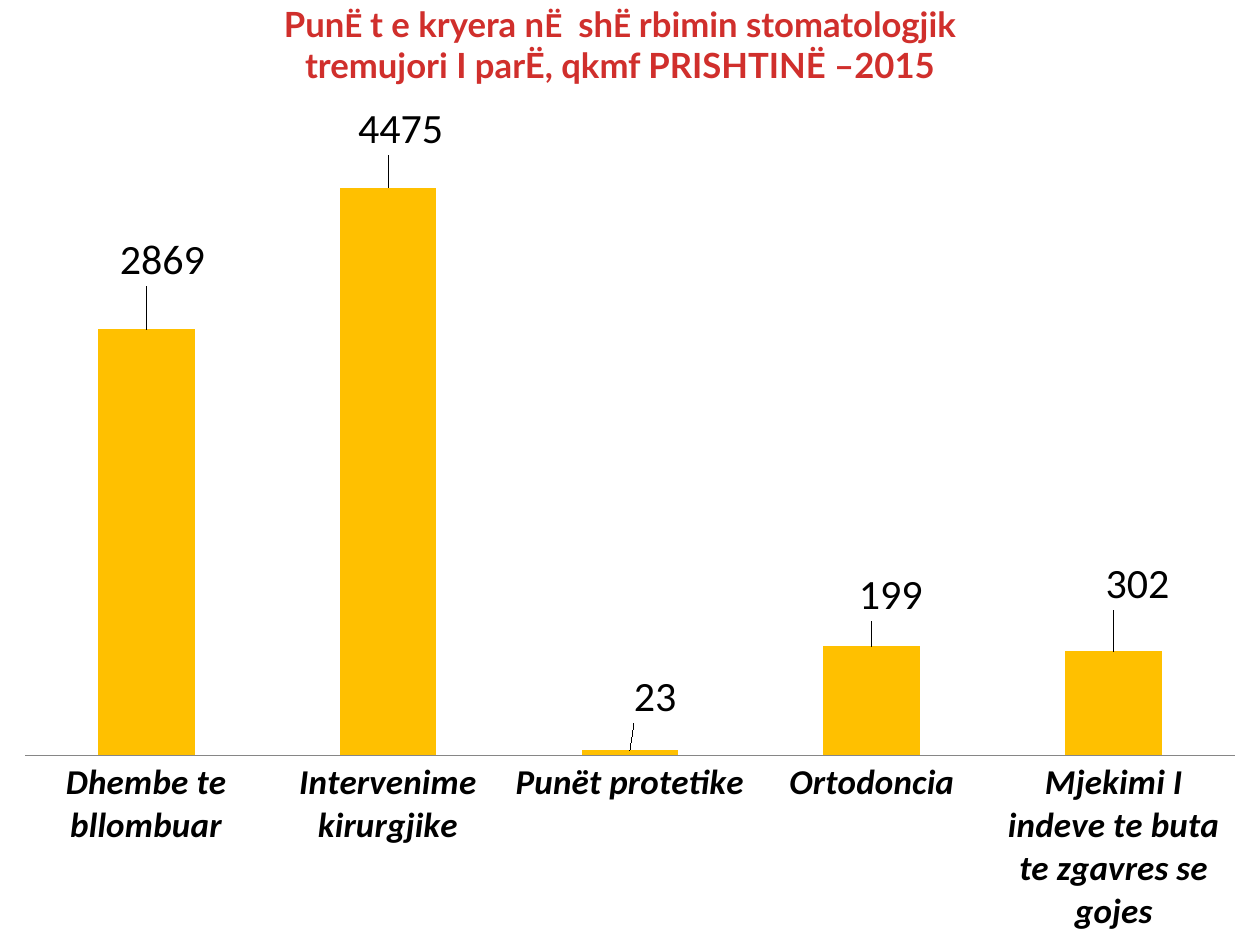
import lxml.etree
import pptx
import pptx.chart.data
import pptx.dml.color
import pptx.enum.chart
import pptx.enum.text
import pptx.oxml.ns
import pptx.util

Inches = pptx.util.Inches
Pt = pptx.util.Pt

# Category, bar height, label text, label shift (fractions of the chart)
WORKS = [
    ("Dhembe te bllombuar", 4203, "2869", 0.013, -0.046),
    ("Intervenime kirurgjike", 5598, "4475", 0.01, -0.033),
    ("Punët protetike", 52, "23", 0.02, -0.026),
    ("Ortodoncia", 1078, "199", 0.015, -0.024),
    ("Mjekimi I indeve te buta te zgavres se gojes", 1029, "302", 0.019, -0.043),
]
# Title lines as (text, size) spans
TITLE = [
    [("Pun", 19.8), ("Ë ", 18), ("t e kryera n", 19.8), ("Ë ", 18),
     (" sh", 19.8), ("Ë ", 18), ("rbimin stomatologjik", 19.8)],
    [("tremujori I parË, qkmf PRISHTINË –2015", 19.8)],
]


def color(value):
    return pptx.dml.color.RGBColor.from_string(value)


def style_font(font, name, size, value, bold=False, italic=False):
    font.name, font.size = name, Pt(size)
    font.bold, font.italic = bold, italic
    font.color.rgb = color(value)


def make_layout(**settings):
    tag = pptx.oxml.ns.qn
    layout = lxml.etree.Element(tag("c:layout"))
    manual = lxml.etree.SubElement(layout, tag("c:manualLayout"))
    for key, value in settings.items():
        lxml.etree.SubElement(manual, tag("c:" + key)).set("val", str(value))
    return layout


def add_title(page):
    box = page.shapes.add_textbox(Inches(0.42), Inches(0), Inches(9), Inches(1))
    frame = box.text_frame
    frame.word_wrap = True
    frame.margin_top = Inches(0.02)
    frame.vertical_anchor = pptx.enum.text.MSO_ANCHOR.TOP
    for index, line in enumerate(TITLE):
        para = frame.add_paragraph() if index else frame.paragraphs[0]
        para.alignment = pptx.enum.text.PP_ALIGN.CENTER
        for text, size in line:
            span = para.add_run()
            span.text = text
            style_font(span.font, "Lato", size, "D02F2C", bold=True)


def add_label(point, text, x, y):
    label = point.data_label
    label.text_frame.text = text
    style_font(label.text_frame.paragraphs[0].runs[0].font, "Calibri", 24, "000000")
    label.position = pptx.enum.chart.XL_LABEL_POSITION.OUTSIDE_END
    element = label.text_frame._txBody.getparent().getparent()
    element.find(pptx.oxml.ns.qn("c:idx")).addnext(make_layout(x=x, y=y))


def add_works_chart(page):
    data = pptx.chart.data.CategoryChartData()
    data.categories = [work[0] for work in WORKS]
    data.add_series("Series 1", [work[1] for work in WORKS])
    chart = page.shapes.add_chart(
        pptx.enum.chart.XL_CHART_TYPE.COLUMN_CLUSTERED,
        Inches(0), Inches(0.83), Inches(10), Inches(6.67), data).chart
    chart.has_legend = chart.has_title = False
    style_font(chart.font, "Calibri", 10, "000000")

    # Plot area
    area = chart._chartSpace.chart.plotArea
    for old in area.findall(pptx.oxml.ns.qn("c:layout")):
        area.remove(old)
    area.insert(0, make_layout(layoutTarget="inner", xMode="edge", yMode="edge",
                               x=0.02, y=0.044, w=0.96, h=0.729))

    # Axes
    values = chart.value_axis
    values.minimum_scale, values.maximum_scale = 0, 6000
    values.has_major_gridlines = False
    values.visible = False
    categories = chart.category_axis
    categories.major_tick_mark = pptx.enum.chart.XL_TICK_MARK.NONE
    categories.format.line.color.rgb = color("868686")
    categories.format.line.width = Pt(0.75)
    style_font(categories.tick_labels.font, "Calibri", 20, "000000", True, True)

    # Bars and their labels
    plot = chart.plots[0]
    plot.gap_width = 150
    plot.vary_by_categories = False
    series = plot.series[0]
    series.format.fill.solid()
    series.format.fill.fore_color.rgb = color("FFC000")
    series.data_labels.show_value = True
    style_font(series.data_labels.font, "Calibri", 24, "000000", bold=True)
    for index, (_, _, text, x, y) in enumerate(WORKS):
        add_label(series.points[index], text, x, y)


def main():
    deck = pptx.Presentation()
    deck.slide_width, deck.slide_height = Inches(10), Inches(7.5)
    page = deck.slides.add_slide(deck.slide_layouts[6])
    add_works_chart(page)
    add_title(page)
    deck.save("out.pptx")


if __name__ == "__main__":
    main()
